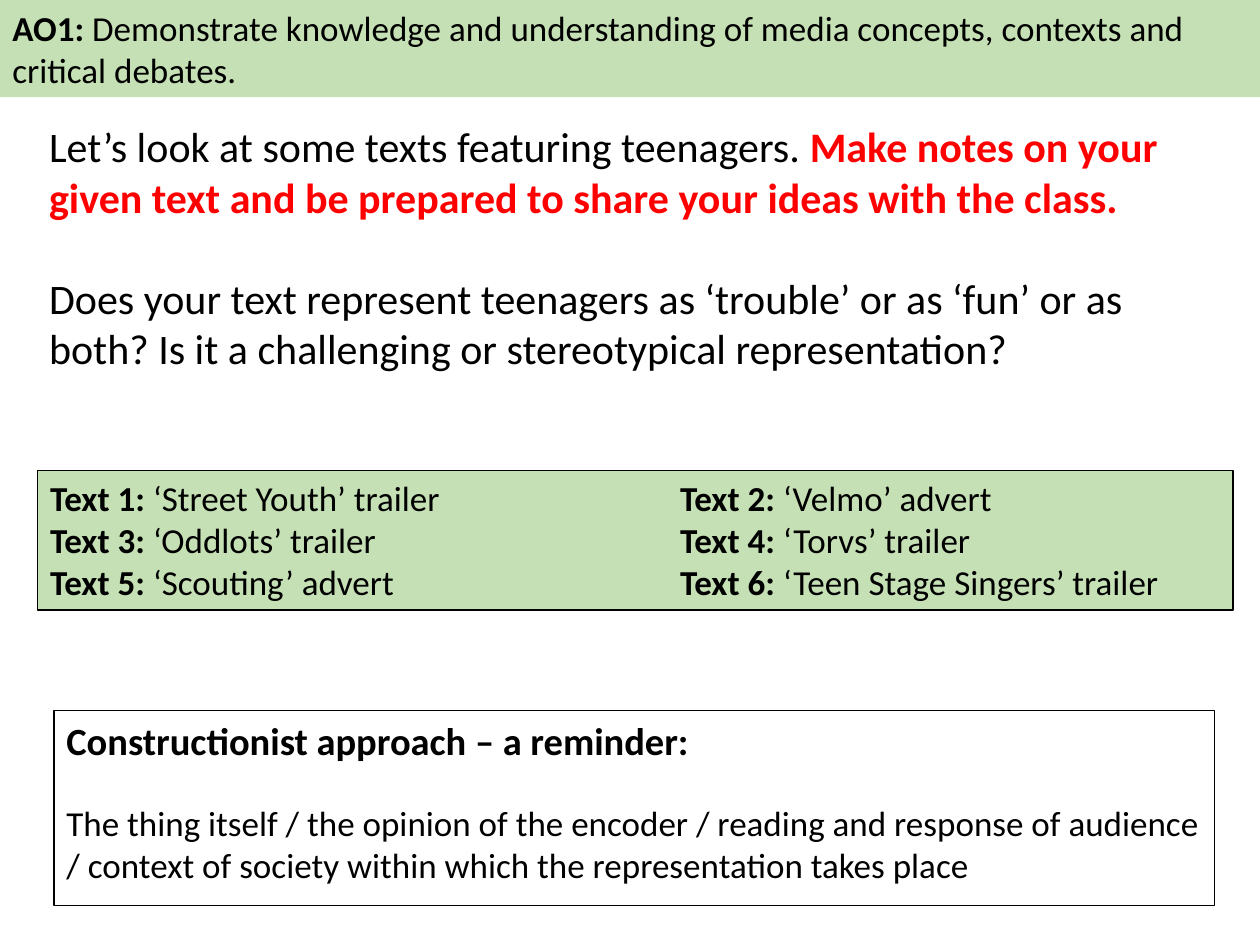
from lxml.etree import SubElement
from pptx import Presentation
from pptx.dml.color import RGBColor
from pptx.enum.shapes import MSO_SHAPE as Shape
from pptx.enum.text import MSO_ANCHOR as Anchor, MSO_AUTO_SIZE as AutoSize, PP_ALIGN as Align
from pptx.oxml.ns import qn
from pptx.util import Cm, Pt

BLACK = RGBColor(0x00, 0x00, 0x00)
RED = RGBColor(0xFF, 0x00, 0x00)
GREEN = RGBColor(0xC5, 0xE0, 0xB4)


class LessonSlide:
    def __init__(self, slide, font="Calibri"):
        self.slide = slide
        self.font = font

    def text_box(self, left, top, width, height):
        box = self.slide.shapes.add_textbox(Cm(left), Cm(top), Cm(width), Cm(height))
        return self._prepare(box.text_frame)

    def panel(self, left, top, width, height, fill=None, line=None):
        panel = self.slide.shapes.add_shape(
            Shape.RECTANGLE, Cm(left), Cm(top), Cm(width), Cm(height))
        panel.shadow.inherit = False
        if fill is None:
            panel.fill.background()
        else:
            panel.fill.solid()
            panel.fill.fore_color.rgb = fill
        if line is None:
            panel.line.fill.background()
        else:
            panel.line.color.rgb = line
            panel.line.width = Pt(0.75)
        return self._prepare(panel.text_frame)

    def _prepare(self, frame):
        frame.word_wrap = True
        frame.auto_size = AutoSize.SHAPE_TO_FIT_TEXT
        frame.vertical_anchor = Anchor.TOP
        return frame

    def paragraph(self, frame, parts, size, space_before=None, tab=None):
        """Write (text, bold, colour) parts into the next paragraph."""
        first = frame.paragraphs[0]
        paragraph = frame.add_paragraph() if first.runs else first
        paragraph.alignment = Align.LEFT
        if space_before:
            paragraph.space_before = Pt(space_before)
        if tab:
            stops = SubElement(paragraph._p.get_or_add_pPr(), qn("a:tabLst"))
            SubElement(stops, qn("a:tab"), pos=str(Cm(tab)), algn="l")
        for text, bold, colour in parts:
            run = paragraph.add_run()
            run.text = text
            run.font.name = self.font
            run.font.size = Pt(size)
            run.font.bold = bold
            run.font.color.rgb = colour


def main():
    deck = Presentation()
    deck.slide_width, deck.slide_height = Cm(25.4), Cm(19.05)
    lesson = LessonSlide(deck.slides.add_slide(deck.slide_layouts[6]))

    objective = lesson.panel(0, 0, 25.4, 1.96, fill=GREEN)
    lesson.paragraph(objective, [
        ("AO1:", True, BLACK),
        (" Demonstrate knowledge and understanding of media concepts, "
         "contexts and critical debates.", False, BLACK),
    ], 20)

    task = lesson.text_box(0.74, 2.31, 23.55, 5.38)
    lesson.paragraph(task, [
        ("Let’s look at some texts featuring teenagers. ", False, BLACK),
        ("Make notes on your given text and be prepared to share your ideas "
         "with the class.", True, RED),
    ], 24)
    lesson.paragraph(task, [
        ("Does your text represent teenagers as ‘trouble’ or as ‘fun’ or as both? "
         "Is it a challenging or stereotypical representation?", False, BLACK),
    ], 24, space_before=29)

    reminder = lesson.panel(1.09, 14.32, 23.4, 3.94, line=BLACK)
    lesson.paragraph(reminder, [
        ("Constructionist approach – a reminder:", True, BLACK),
    ], 22)
    lesson.paragraph(reminder, [
        ("The thing itself / the opinion of the encoder / reading and response of "
         "audience / context of society within which the representation takes place",
         False, BLACK),
    ], 20, space_before=22)

    media_texts = [
        "‘Street Youth’ trailer", "‘Velmo’ advert",
        "‘Oddlots’ trailer", "‘Torvs’ trailer",
        "‘Scouting’ advert", "‘Teen Stage Singers’ trailer",
    ]
    text_list = lesson.panel(0.76, 9.48, 24.1, 2.82, fill=GREEN, line=BLACK)
    for index in range(0, len(media_texts), 2):
        left_text, right_text = media_texts[index:index + 2]
        lesson.paragraph(text_list, [
            (f"Text {index + 1}: ", True, BLACK),
            (f"{left_text}\t", False, BLACK),
            (f"Text {index + 2}: ", True, BLACK),
            (right_text, False, BLACK),
        ], 20, tab=12.7)

    deck.save("out.pptx")


if __name__ == "__main__":
    main()
